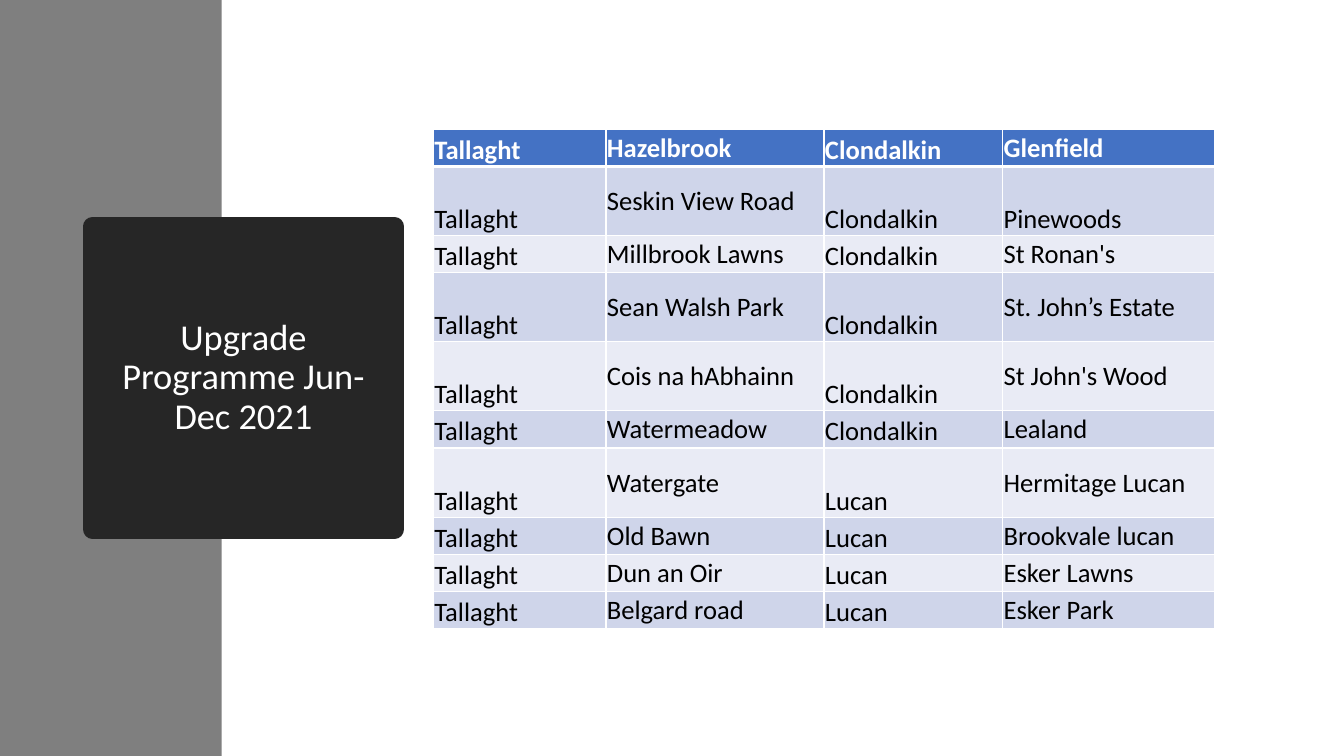
import dataclasses
import typing

import lxml.etree
import pptx
import pptx.dml.color
import pptx.enum.shapes
import pptx.enum.text
import pptx.oxml.ns
import pptx.util

Color = pptx.dml.color.RGBColor
Anchor = pptx.enum.text.MSO_ANCHOR
Format = dict[str, typing.Any]

WHITE = Color(0xFF, 0xFF, 0xFF)
BLACK = Color(0x00, 0x00, 0x00)
GRAY = Color(0x7F, 0x7F, 0x7F)
CHARCOAL = Color(0x26, 0x26, 0x26)
HEADER_BLUE = Color(0x44, 0x72, 0xC4)
BANDS = (Color(0xE9, 0xEB, 0xF5), Color(0xCF, 0xD5, 0xEA))

FONT = "Calibri"
GRID_COLUMNS, GRID_ROWS = 160, 90
SLIDE_WIDTH, SLIDE_HEIGHT = pptx.util.Inches(13.33), pptx.util.Inches(7.5)

COLUMN_SHARES = (171, 216, 177, 210)
SINGLE_ROW, TALL_ROW = 37, 69
TALL_ROWS = {1, 3, 4, 6}
ANCHORS = (Anchor.BOTTOM, Anchor.MIDDLE, Anchor.BOTTOM, Anchor.MIDDLE)
LOW_CELLS = {(1, 3)}
CELL_MARGINS: Format = {
    "margin_left": pptx.util.Inches(0.01),
    "margin_top": pptx.util.Inches(0.01),
    "margin_right": pptx.util.Inches(0.01),
    "margin_bottom": 0,
}

ESTATES = (
    ("Tallaght", "Hazelbrook", "Clondalkin", "Glenfield"),
    ("Tallaght", "Seskin View Road", "Clondalkin", "Pinewoods"),
    ("Tallaght", "Millbrook Lawns", "Clondalkin", "St Ronan's"),
    ("Tallaght", "Sean Walsh Park", "Clondalkin", "St. John’s Estate"),
    ("Tallaght", "Cois na hAbhainn", "Clondalkin", "St John's Wood"),
    ("Tallaght", "Watermeadow", "Clondalkin", "Lealand"),
    ("Tallaght", "Watergate", "Lucan", "Hermitage Lucan"),
    ("Tallaght", "Old Bawn", "Lucan", "Brookvale lucan"),
    ("Tallaght", "Dun an Oir", "Lucan", "Esker Lawns"),
    ("Tallaght", "Belgard road", "Lucan", "Esker Park"),
)


@dataclasses.dataclass(frozen=True)
class Area:
    """A rectangle measured in grid columns and rows."""
    column: float
    row: float
    columns: float
    rows: float

    def lengths(self) -> tuple[int, int, int, int]:
        across, down = SLIDE_WIDTH / GRID_COLUMNS, SLIDE_HEIGHT / GRID_ROWS
        return (round(self.column * across), round(self.row * down),
                round(self.columns * across), round(self.rows * down))


@dataclasses.dataclass(frozen=True)
class Panel:
    area: Area
    color: Color
    border: float = 0
    text: str = ""


PANELS = (
    Panel(Area(0, 0, 26.4, 90), GRAY),
    Panel(Area(11, 27, 36, 36), CHARCOAL, 13.75, "Upgrade Programme Jun-Dec 2021"),
)
TABLE_AREA = Area(51.6, 15.4, 93, 59.4)


def apply(target: typing.Any, values: Format) -> None:
    for name, value in values.items():
        setattr(target, name, value)


def add_text(frame: typing.Any, text: str, size: float, color: Color,
             bold: bool = False, layout: Format | None = None) -> None:
    para = frame.paragraphs[0]
    apply(para, layout or {})
    span = para.add_run()
    span.text = text
    apply(span.font, {"name": FONT, "size": pptx.util.Pt(size), "bold": bold})
    span.font.color.rgb = color


def add_panel(page: typing.Any, panel: Panel) -> None:
    box = page.shapes.add_shape(
        pptx.enum.shapes.MSO_SHAPE.RECTANGLE, *panel.area.lengths())
    box.shadow.inherit = False
    box.fill.solid()
    box.fill.fore_color.rgb = panel.color
    if panel.border:
        box.line.color.rgb = panel.color
        box.line.width = pptx.util.Pt(panel.border)
        lxml.etree.SubElement(box.line._get_or_add_ln(), pptx.oxml.ns.qn("a:round"))
    else:
        box.line.fill.background()
    if panel.text:
        apply(box.text_frame, {"word_wrap": True, "vertical_anchor": Anchor.MIDDLE})
        add_text(box.text_frame, panel.text, 26, WHITE, layout={
            "alignment": pptx.enum.text.PP_ALIGN.CENTER, "line_spacing": 0.9})


def add_border(cell: typing.Any, side: str, points: float) -> None:
    qn = pptx.oxml.ns.qn
    line = lxml.etree.SubElement(cell._tc.get_or_add_tcPr(), qn(f"a:ln{side}"),
                                 w=str(pptx.util.Pt(points)))
    fill = lxml.etree.SubElement(line, qn("a:solidFill"))
    lxml.etree.SubElement(fill, qn("a:srgbClr"), val=str(WHITE))


def fill_cell(cell: typing.Any, row: int, column: int) -> None:
    header = row == 0
    apply(cell, CELL_MARGINS)
    cell.vertical_anchor = Anchor.BOTTOM if (row, column) in LOW_CELLS else ANCHORS[column]
    thick_side = {0: "B", 1: "T"}.get(row)
    for side in "LRTB":
        add_border(cell, side, 3 if side == thick_side else 1)
    cell.fill.solid()
    cell.fill.fore_color.rgb = HEADER_BLUE if header else BANDS[row % 2]
    add_text(cell.text_frame, ESTATES[row][column], 19,
             WHITE if header else BLACK, bold=header)


def add_estates(page: typing.Any) -> None:
    left, top, width, height = TABLE_AREA.lengths()
    table = page.shapes.add_table(
        len(ESTATES), len(COLUMN_SHARES), left, top, width, height).table
    row_shares = [TALL_ROW if row in TALL_ROWS else SINGLE_ROW
                  for row in range(len(ESTATES))]
    for column, share in zip(table.columns, COLUMN_SHARES):
        column.width = round(width * share / sum(COLUMN_SHARES))
    for row, share in zip(table.rows, row_shares):
        row.height = round(height * share / sum(row_shares))
    for row in range(len(ESTATES)):
        for column in range(len(COLUMN_SHARES)):
            fill_cell(table.cell(row, column), row, column)


def main() -> None:
    deck = pptx.Presentation()
    apply(deck, {"slide_width": SLIDE_WIDTH, "slide_height": SLIDE_HEIGHT})
    page = deck.slides.add_slide(deck.slide_layouts[6])
    for panel in PANELS:
        add_panel(page, panel)
    add_estates(page)
    deck.save("out.pptx")


if __name__ == "__main__":
    main()
